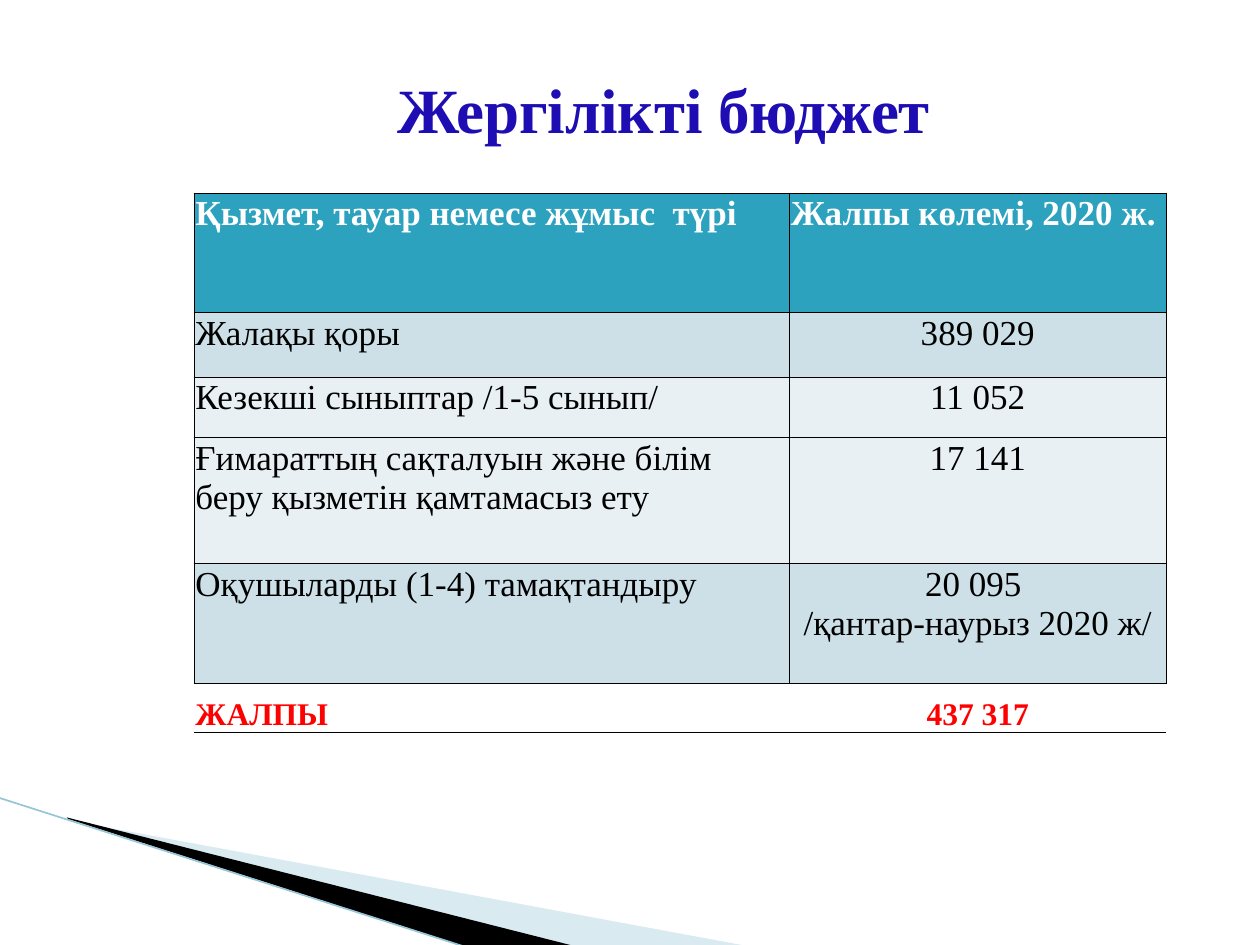
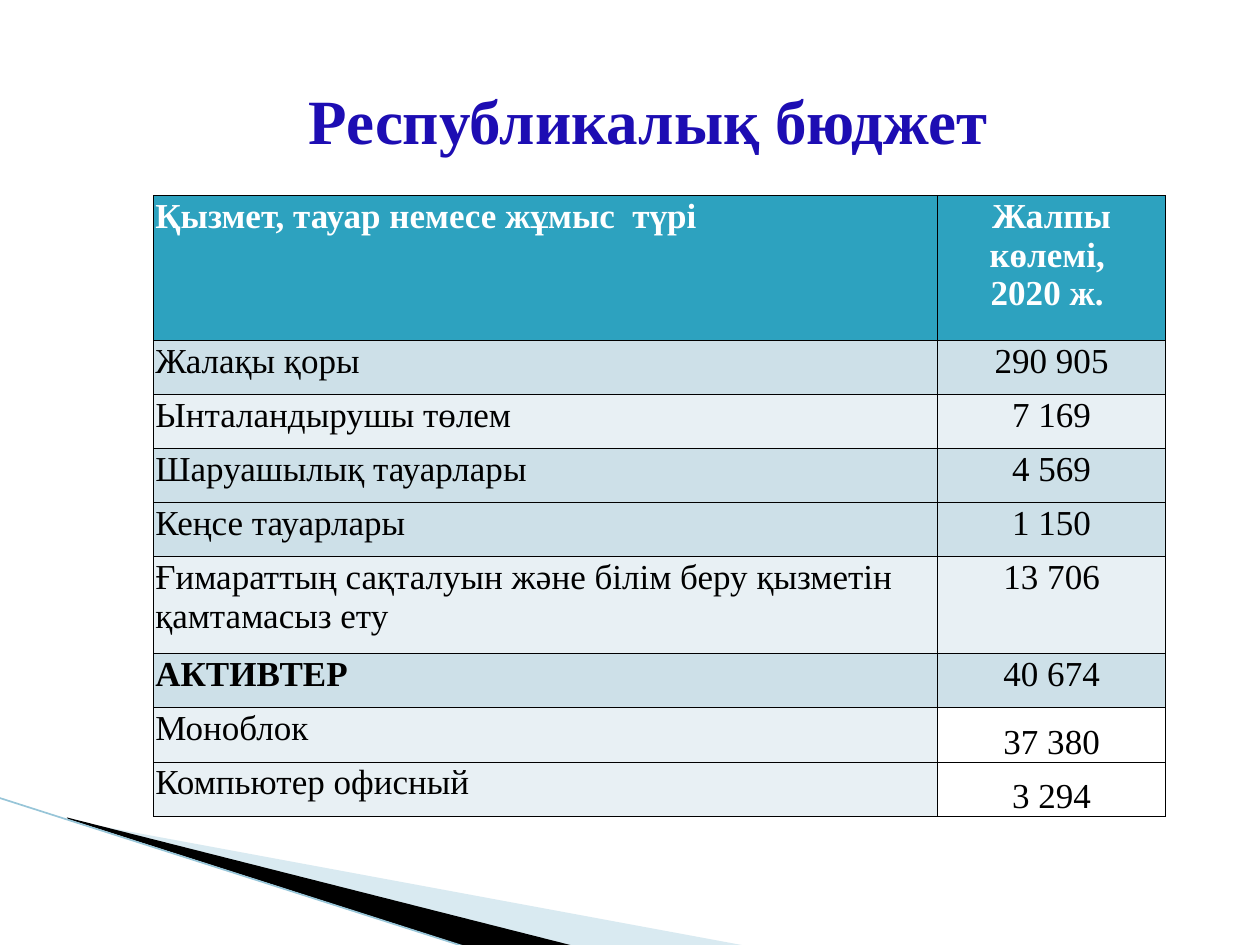
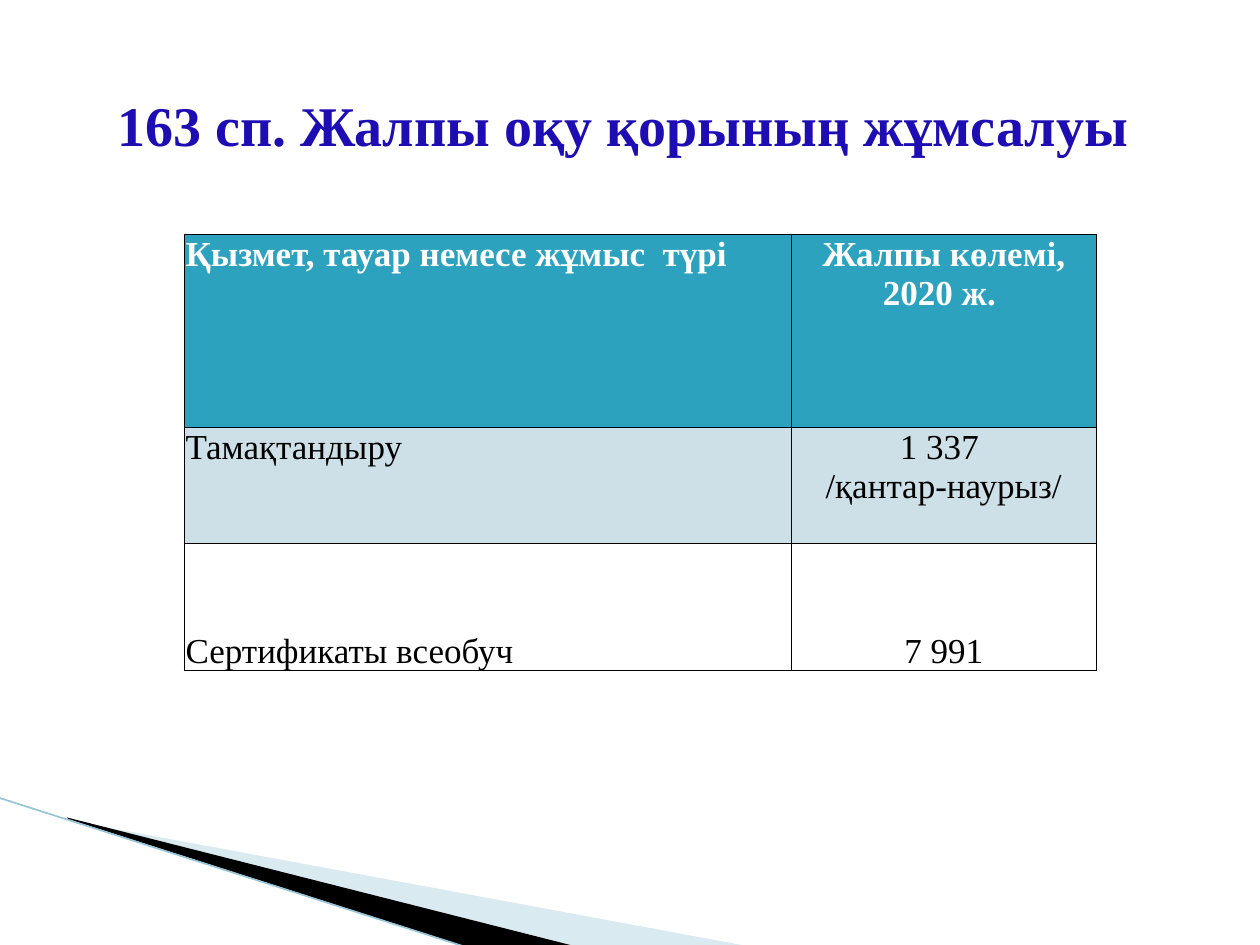
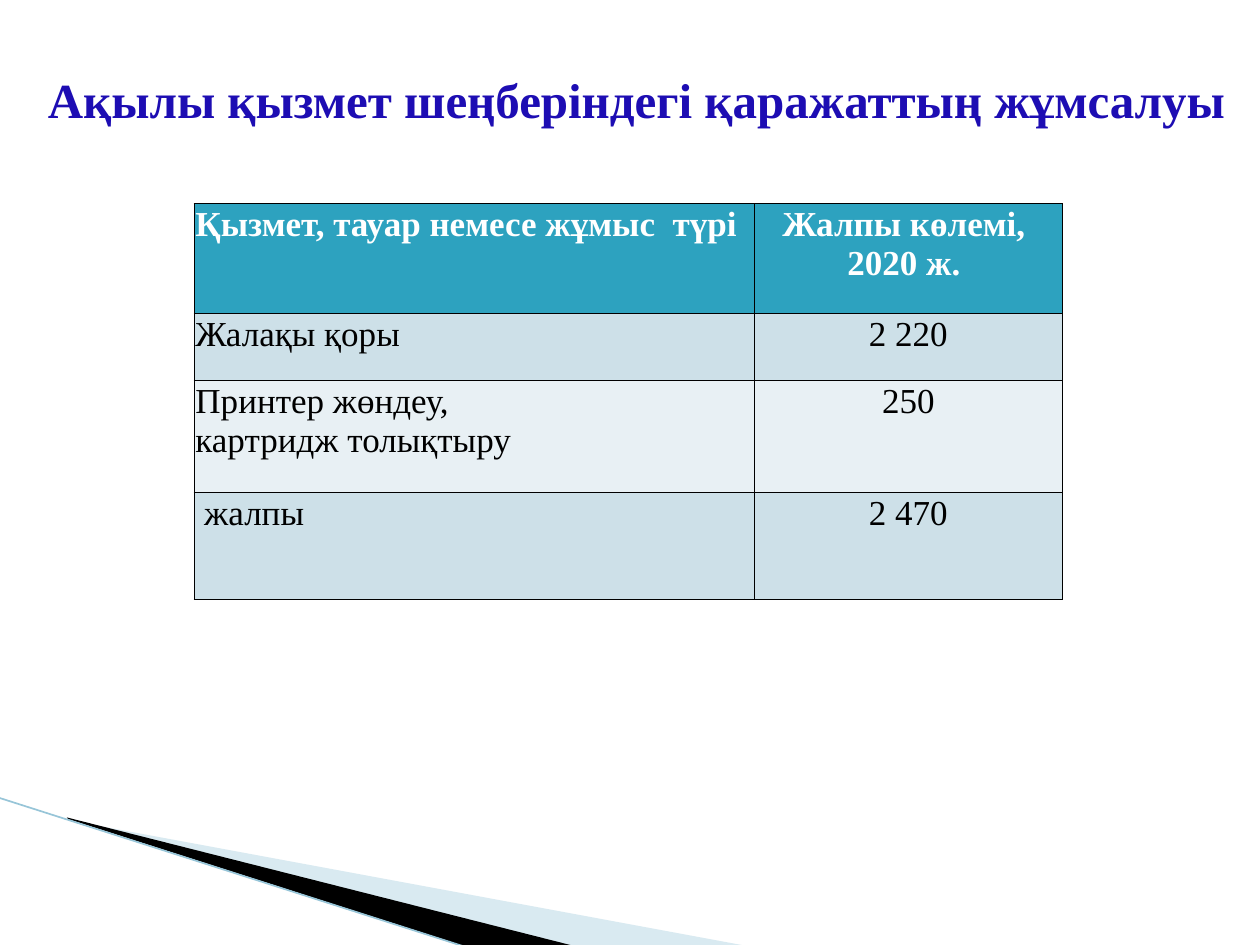
from dataclasses import dataclass

from pptx import Presentation
from pptx.dml.color import RGBColor as RGB
from pptx.enum.text import MSO_ANCHOR as Anchor, MSO_AUTO_SIZE as Auto, PP_ALIGN as Align
from pptx.oxml.ns import qn
from pptx.util import Cm, Pt
from lxml.etree import SubElement as Sub


@dataclass(frozen=True)
class Theme:
    font: str = "Times New Roman"
    title: str = "1D0DB3"
    head: str = "2DA2BF"
    dark: str = "CDE0E8"
    light: str = "E8F0F4"
    black: str = "000000"
    white: str = "FFFFFF"
    red: str = "FF0000"
    pale: str = "A0CBDC"
    edge: str = "97C5D8"
    body: int = 20
    total: int = 18
    rule: float = 0.5


T = Theme()
FILLS = {"h": T.head, "d": T.dark, "l": T.light, "-": None}

HEAD = "Қызмет, тауар немесе жұмыс  түрі"
SPLIT = "Жалпы көлемі, \n2020 ж. "
UPKEEP = "Ғимараттың сақталуын және білім беру қызметін қамтамасыз ету"

# Row: label, value, height, fills of both cells ("h", "d", "l", "-"), kind
SLIDES = [
    dict(title="Жергілікті бюджет", size=36, box=(7.75, 1.3, 11.38, 1.8),
         at=(3.91, 3.89), cols=(12, 7.6), rows=[
             (HEAD, "Жалпы көлемі, 2020 ж. ", 2.41, "hh", "head"),
             ("Жалақы қоры", "389 029", 1.3, "dd", ""),
             ("Кезекші сыныптар /1-5 сынып/", "11 052", 1.22, "ll", ""),
             (UPKEEP, "17 141", 2.54, "ll", ""),
             ("Оқушыларды (1-4) тамақтандыру",
              "20 095 \n/қантар-наурыз 2020 ж/", 2.41, "dd", ""),
             ("ЖАЛПЫ", "437 317", 0.99, "--", "total"),
             ("", "", 0.99, "--", "end")]),
    dict(title="Республикалық бюджет", size=36, box=(5.97, 1.52, 14.33, 1.8),
         at=(3.1, 3.94), cols=(15.8, 4.6), rows=[
             (HEAD, SPLIT, 2.92, "hh", "head"),
             ("Жалақы қоры", "290 905", 1.09, "dd", ""),
             ("Ынталандырушы төлем", "7 169", 1.09, "ll", ""),
             ("Шаруашылық тауарлары", "4 569", 1.09, "dd", ""),
             ("Кеңсе тауарлары", "1 150", 1.09, "dd", ""),
             (UPKEEP, "13 706", 1.96, "ll", ""),
             ("АКТИВТЕР", "40 674", 1.09, "dd", "group"),
             ("Моноблок", "37 380", 1.09, "l-", ""),
             ("Компьютер офисный", "3 294", 1.09, "l-", "")]),
    dict(title="163 сп. Жалпы оқу қорының жұмсалуы", size=32,
         box=(2.11, 1.7, 21.39, 1.63), at=(3.71, 4.72), cols=(12.24, 6.15), rows=[
             (HEAD, "Жалпы көлемі, 2020 ж. ", 3.89, "hh", "head"),
             ("Тамақтандыру", "1 337 \n/қантар-наурыз/", 2.34, "dd", ""),
             ("Сертификаты всеобуч", "7 991", 2.57, "--", "")]),
    dict(title="Ақылы қызмет шеңберіндегі қаражаттың жұмсалуы", size=28,
         box=(0.71, 1.27, 24.74, 1.45), at=(3.91, 4.11), cols=(11.3, 6.2), rows=[
             (HEAD, SPLIT, 2.21, "hh", "head"),
             ("Жалақы қоры", "2 220", 1.35, "dd", ""),
             ("Принтер жөндеу,\nкартридж толықтыру", "250", 2.26, "ll", ""),
             (" жалпы", "2 470", 2.16, "dd", "")]),
]

BANDS = [
    (T.pale, 40, [(1.4, 16.54), (15.11, 19.08), (11.58, 19.08), (1.4, 16.51)]),
    (T.black, 100, [(1.35, 16.48), (11.61, 19.08), (9.45, 19.1), (1.37, 16.51)]),
]
EDGE = (-0.03, 16.08, 9.42, 19.1)


def style(par, size, color, bold):
    font = par.font
    font.name, font.size, font.bold = T.font, Pt(size), bold
    font.color.rgb = RGB.from_string(color)


def add_bands(slide):
    """Draw the corner bands and move them to the layout, which all slides share."""
    made = []
    for color, alpha, pts in BANDS:
        pts = [(Cm(x), Cm(y)) for x, y in pts]
        form = slide.shapes.build_freeform(*pts[0])
        form.add_line_segments(pts[1:])
        band = form.convert_to_shape()
        band.shadow.inherit = False
        band.line.fill.background()
        band.fill.solid()
        band.fill.fore_color.rgb = RGB.from_string(color)
        if alpha < 100:
            tint = band.element.spPr.find(qn("a:solidFill"))[0]
            Sub(tint, qn("a:alpha"), val=str(alpha * 1000))
        made.append(band)
    edge = slide.shapes.add_connector(1, *map(Cm, EDGE))
    edge.line.color.rgb = RGB.from_string(T.edge)
    edge.line.width = Pt(0.95)
    Sub(edge.element.spPr, qn("a:effectLst"))
    for num, shape in enumerate(made + [edge], 101):
        shape.element.xpath("./*/p:cNvPr")[0].set("id", str(num))
        slide.slide_layout.shapes.element.append(shape.element)


def add_title(slide, text, size, box):
    title = slide.shapes.title
    title.left, title.top, title.width, title.height = map(Cm, box)
    frame = title.text_frame
    frame.text = text
    frame.word_wrap = False
    frame.auto_size = Auto.SHAPE_TO_FIT_TEXT
    frame.vertical_anchor = Anchor.TOP
    par = frame.paragraphs[0]
    par.alignment = Align.LEFT
    style(par, size, T.title, True)


def rule_cell(cell, sides):
    """Rule the named sides (of L, R, T, B) and clear the others."""
    props = cell._tc.get_or_add_tcPr()
    for spot, side in enumerate("LRTB"):
        line = Sub(props, qn("a:ln" + side), w=str(Pt(T.rule)))
        props.insert(spot, line)
        if side in sides:
            Sub(Sub(line, qn("a:solidFill")), qn("a:srgbClr"), val=T.black)
        else:
            Sub(line, qn("a:noFill"))


def fill_cell(cell, text, tone, kind, col):
    cell.text = text
    cell.margin_left = cell.margin_right = cell.margin_top = Cm(0.03)
    cell.margin_bottom = 0
    color = FILLS[tone]
    if color:
        cell.fill.solid()
        cell.fill.fore_color.rgb = RGB.from_string(color)
    else:
        cell.fill.background()
    cell.vertical_anchor = Anchor.TOP if color else Anchor.BOTTOM
    ink = {"head": T.white, "total": T.red}.get(kind, T.black)
    bold = kind in ("head", "total") or (kind == "group" and col == 0)
    size = T.total if kind in ("total", "end") else T.body
    for par in cell.text_frame.paragraphs:
        par.alignment = Align.CENTER if col else Align.LEFT
        style(par, size, ink, bold)
    rule_cell(cell, {"total": "TB", "end": "T"}.get(kind, "LRTB"))


def add_grid(slide, at, cols, rows):
    high = sum(row[2] for row in rows)
    box = map(Cm, (*at, sum(cols), high))
    grid = slide.shapes.add_table(len(rows), len(cols), *box).table
    grid.horz_banding = False
    for col, wide in zip(grid.columns, cols):
        col.width = Cm(wide)
    for r, (label, value, tall, tones, kind) in enumerate(rows):
        grid.rows[r].height = Cm(tall)
        for c, (text, tone) in enumerate(zip((label, value), tones)):
            fill_cell(grid.cell(r, c), text, tone, kind, c)


def main():
    prs = Presentation()
    prs.slide_width, prs.slide_height = Cm(25.4), Cm(19.05)
    layout = prs.slide_layouts[5]
    for num, part in enumerate(SLIDES):
        slide = prs.slides.add_slide(layout)
        if num == 0:
            add_bands(slide)
        add_title(slide, part["title"], part["size"], part["box"])
        add_grid(slide, part["at"], part["cols"], part["rows"])
    prs.save("out.pptx")


if __name__ == "__main__":
    main()
